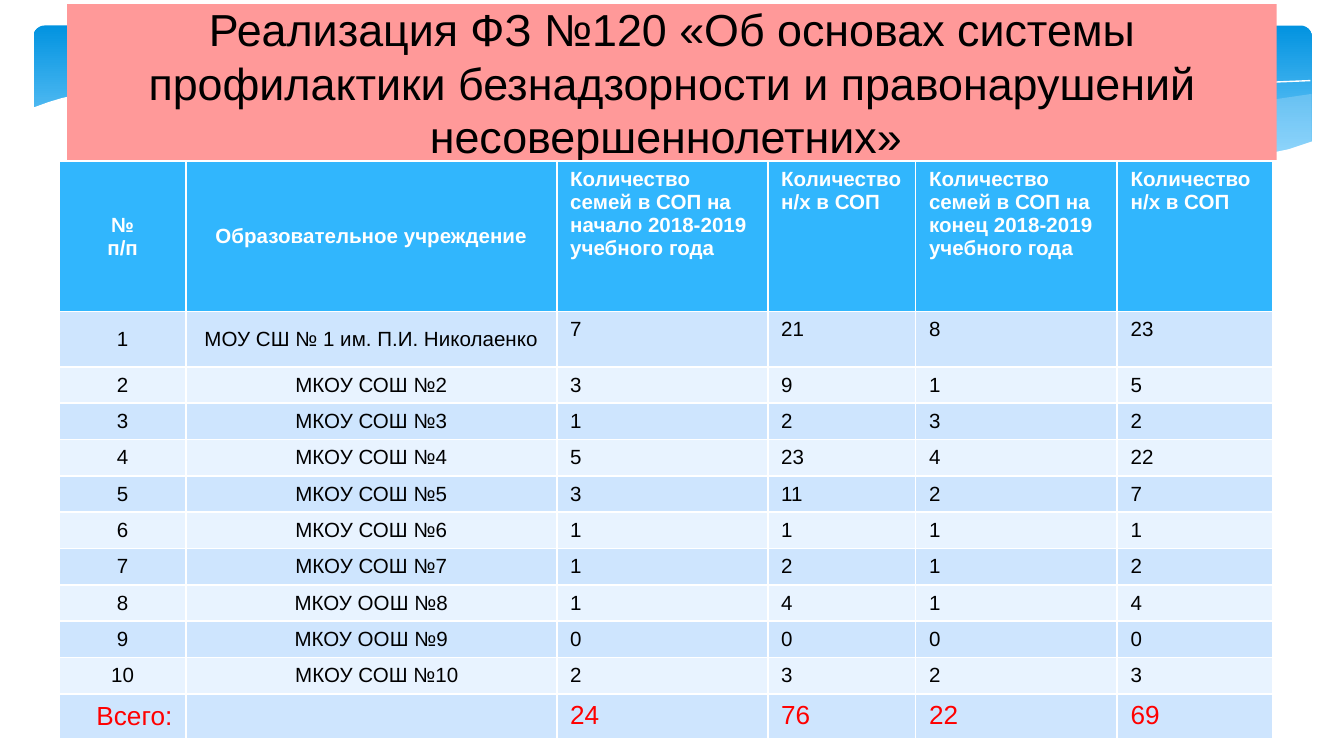
from lxml.etree import SubElement
from pptx import Presentation
from pptx.dml.color import RGBColor
from pptx.enum.shapes import MSO_SHAPE as Shape
from pptx.enum.text import MSO_ANCHOR as Anchor, MSO_AUTO_SIZE as AutoSize, PP_ALIGN as Align
from pptx.oxml.ns import qn
from pptx.util import Pt

FONT = "Arial"
WHITE = RGBColor(0xFF, 0xFF, 0xFF)
BLACK = RGBColor(0x00, 0x00, 0x00)
RED = RGBColor(0xFF, 0x00, 0x00)
PINK = RGBColor(0xFF, 0x99, 0x99)
DEEP_BLUE = RGBColor(0x02, 0x93, 0xE0)
SKY_BLUE = RGBColor(0x83, 0xD3, 0xFE)
PALE_BLUE = RGBColor(0xC6, 0xE7, 0xFC)
HEADER_BLUE = RGBColor(0x31, 0xB6, 0xFD)
BANDS = (RGBColor(0xCE, 0xE5, 0xFE), RGBColor(0xE8, 0xF3, 0xFF))

WAVE_SCALE = Pt(0.72)
RIGHT_WAVE = [
    (975, 70), (948, 74), (921, 78), (891, 83), (861, 88), (805, 98), (753, 107),
    (706, 114), (661, 120), (691, 123), (719, 125), (745, 127), (769, 128),
    (792, 129), (814, 129), (844, 129), (872, 126), (897, 124), (921, 120),
    (942, 115), (963, 110), (976, 106), (976, 70)]
MIDDLE_WAVE = [
    (893, 125), (866, 123), (807, 116), (741, 106), (668, 94), (629, 87), (598, 82),
    (569, 77), (541, 73), (514, 69), (489, 67), (442, 63), (399, 60), (361, 60),
    (328, 61), (299, 63), (286, 64), (323, 68), (362, 73), (404, 79), (449, 87),
    (530, 101), (584, 110), (634, 117), (680, 122), (722, 126), (761, 128),
    (796, 130), (828, 129), (857, 128)]
LONG_CREST = [
    (309, 67), (328, 65), (353, 63), (387, 61), (433, 61), (469, 62), (510, 65),
    (556, 68), (608, 74), (665, 81), (727, 90), (795, 102), (869, 116), (907, 124)]
SHORT_CREST = [
    (613, 113), (653, 105), (695, 97), (748, 88), (806, 78), (866, 70), (895, 66),
    (924, 63), (951, 61), (975, 60)]
WHITE_WAVE = [
    (977, 105), (959, 111), (940, 115), (920, 120), (899, 123), (875, 125),
    (850, 127), (823, 128), (793, 128), (761, 127), (726, 125), (688, 122),
    (648, 117), (603, 111), (555, 104), (503, 96), (447, 86), (391, 76), (340, 69),
    (292, 64), (250, 60), (211, 59), (177, 59), (146, 59), (119, 61), (95, 64),
    (76, 67), (59, 70), (46, 73), (36, 76), (25, 80), (23, 81), (23, 168), (977, 168)]

HEADERS = [
    ["№", "п/п"],
    ["Образовательное учреждение"],
    ["Количество семей в СОП на начало 2018-2019 учебного года"],
    ["Количество н/х в СОП"],
    ["Количество семей в СОП на конец 2018-2019 учебного года"],
    ["Количество н/х в СОП"]]
SCHOOLS = [
    ("МОУ СШ № 1 им. П.И. Николаенко", 7, 21, 8, 23),
    ("МКОУ СОШ №2", 3, 9, 1, 5),
    ("МКОУ СОШ №3", 1, 2, 3, 2),
    ("МКОУ СОШ №4", 5, 23, 4, 22),
    ("МКОУ СОШ №5", 3, 11, 2, 7),
    ("МКОУ СОШ №6", 1, 1, 1, 1),
    ("МКОУ СОШ №7", 1, 2, 1, 2),
    ("МКОУ ООШ №8", 1, 4, 1, 4),
    ("МКОУ ООШ №9", 0, 0, 0, 0),
    ("МКОУ СОШ №10", 2, 3, 2, 3)]
TOTALS = ["Всего:", "", 24, 76, 22, 69]
COLUMN_SHARES = (0.94, 2.76, 1.57, 1.1, 1.5, 1.16)
ROW_HEIGHTS = [80.6, 29.5] + [18.7] * 9 + [16.6]


def add_run(paragraph, text, size, color, bold=False):
    run = paragraph.add_run()
    run.text = text
    run.font.name = FONT
    run.font.size = Pt(size)
    run.font.bold = bold
    run.font.color.rgb = color


def add_wave(slide, left, top, points, fill=None, opacity=100):
    builder = slide.shapes.build_freeform(*points[0], scale=WAVE_SCALE)
    builder.add_line_segments(points[1:], close=fill is not None)
    wave = builder.convert_to_shape(Pt(left), Pt(top))
    wave.shadow.inherit = False
    if fill is None:
        wave.fill.background()
        wave.line.color.rgb = WHITE
        wave.line.width = Pt(0)
        return
    wave.fill.solid()
    wave.fill.fore_color.rgb = fill
    wave.line.fill.background()
    if opacity < 100:
        color = wave.fill._xPr.find(".//" + qn("a:srgbClr"))
        SubElement(color, qn("a:alpha"), val=str(opacity * 1000))


def add_backdrop(slide, left, top, width, height):
    panel = slide.shapes.add_shape(
        Shape.ROUNDED_RECTANGLE, Pt(left + 18), Pt(top + 13.7), Pt(width - 35.3), Pt(height - 37))
    panel.adjustments[0] = 0.07
    panel.shadow.inherit = False
    panel.line.fill.background()
    panel.fill.gradient()
    panel.fill.gradient_angle = 270
    for stop, color, position in zip(
            panel.fill.gradient_stops, (DEEP_BLUE, SKY_BLUE), (0, 0.9)):
        stop.color.rgb = color
        stop.position = position
    add_wave(slide, left, top, RIGHT_WAVE, PALE_BLUE, 29)
    add_wave(slide, left, top, MIDDLE_WAVE, PALE_BLUE, 40)
    add_wave(slide, left, top, LONG_CREST)
    add_wave(slide, left, top, SHORT_CREST)
    add_wave(slide, left, top, WHITE_WAVE, WHITE)


def place_title(slide, left, top, width, height):
    title = slide.shapes.title
    slide.shapes._spTree.append(title._element)
    title.left, title.top, title.width, title.height = map(Pt, (left, top, width, height))
    title.fill.solid()
    title.fill.fore_color.rgb = PINK
    frame = title.text_frame
    frame.word_wrap = True
    frame.auto_size = AutoSize.NONE
    frame.vertical_anchor = Anchor.MIDDLE
    paragraph = frame.paragraphs[0]
    paragraph.alignment = Align.CENTER
    add_run(paragraph, "Реализация ФЗ №120 «Об основах системы профилактики "
            "безнадзорности и правонарушений несовершеннолетних» ", 24, BLACK)


def fill_cell(cell, lines, fill, alignment, size, color, bold=False):
    cell.fill.solid()
    cell.fill.fore_color.rgb = fill
    cell.vertical_anchor = Anchor.TOP if alignment == Align.LEFT else Anchor.MIDDLE
    frame = cell.text_frame
    for index, line in enumerate(lines):
        paragraph = frame.add_paragraph() if index else frame.paragraphs[0]
        paragraph.alignment = alignment
        if line:
            add_run(paragraph, line, size, color, bold)
        else:
            SubElement(paragraph._p, qn("a:endParaRPr"), sz=str(size * 100))


def add_school_table(slide, left, top, width, height):
    table = slide.shapes.add_table(
        len(ROW_HEIGHTS), len(HEADERS), Pt(left), Pt(top), Pt(width), Pt(height)).table
    for column, share in zip(table.columns, COLUMN_SHARES):
        column.width = Pt(width * share / sum(COLUMN_SHARES))
    for row, row_height in zip(table.rows, ROW_HEIGHTS):
        row.height = Pt(row_height)
    alignments = [Align.CENTER] * 2 + [Align.LEFT] * 4
    for index, (lines, alignment) in enumerate(zip(HEADERS, alignments)):
        fill_cell(table.cell(0, index), lines, HEADER_BLUE, alignment, 11, WHITE, True)
    for number, school in enumerate(SCHOOLS, 1):
        for index, value in enumerate((number, *school)):
            fill_cell(table.cell(number, index), [str(value)], BANDS[(number - 1) % 2],
                      alignments[index], 11, BLACK)
        name_cell = table.cell(number, 1)
        name_cell.margin_top = name_cell.margin_bottom = Pt(3)
    table.cell(len(SCHOOLS), 1).margin_left = Pt(13.2)
    last = len(SCHOOLS) + 1
    for index, value in enumerate(TOTALS):
        fill_cell(table.cell(last, index), [str(value)], BANDS[0],
                  Align.LEFT if index else Align.RIGHT, 14, RED)


def main():
    presentation = Presentation()
    presentation.slide_width, presentation.slide_height = Pt(720), Pt(405)
    slide = presentation.slides.add_slide(presentation.slide_layouts[5])
    add_backdrop(slide, 0, 0, 720, 121.2)
    place_title(slide, 36, 2.2, 648, 83.5)
    add_school_table(slide, 31.9, 86.4, 650.2, sum(ROW_HEIGHTS))
    presentation.save("out.pptx")


if __name__ == "__main__":
    main()
